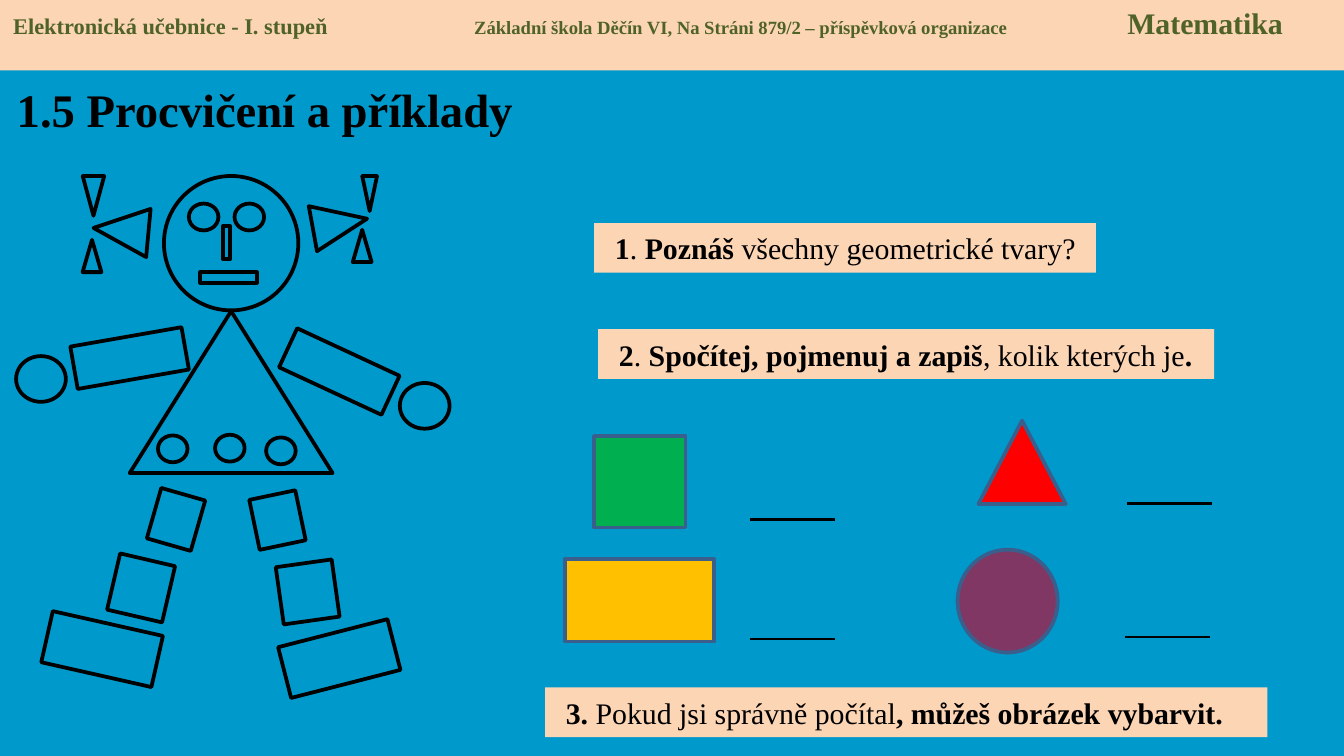
from dataclasses import dataclass

from lxml import etree
from pptx import Presentation
from pptx.dml.color import RGBColor
from pptx.enum.shapes import MSO_CONNECTOR, MSO_SHAPE
from pptx.enum.text import MSO_ANCHOR, MSO_AUTO_SIZE, PP_ALIGN
from pptx.oxml.ns import qn
from pptx.util import Pt

RECTANGLE = MSO_SHAPE.RECTANGLE
OVAL = MSO_SHAPE.OVAL
TRIANGLE = MSO_SHAPE.ISOSCELES_TRIANGLE
PX = 4572  # 200 px to the inch


@dataclass(frozen=True)
class Theme:
    font: str = "Times New Roman"
    background: str = "0099CC"
    band: str = "FCD5B5"
    header_text: str = "4F6228"
    ink: str = "000000"
    outline: str = "3A5F8C"
    green: str = "00B050"
    yellow: str = "FFC000"
    purple: str = "813763"
    red: str = "FF0000"
    title_size: int = 25
    subject_size: int = 16
    book_size: int = 12
    school_size: int = 10
    task_size: int = 16
    outline_width: float = 2
    answer_width: float = 1.5


theme = Theme()


def add_figure(kind, box, fill=None, line=None, rotation=0):
    shape = slide.shapes.add_shape(kind, *(value * PX for value in box))
    shape.shadow.inherit = False
    shape.rotation = rotation
    if fill:
        shape.fill.solid()
        shape.fill.fore_color.rgb = RGBColor.from_string(fill)
    else:
        shape.fill.background()
    if line:
        shape.line.color.rgb = RGBColor.from_string(line)
        shape.line.width = Pt(theme.outline_width)
    else:
        shape.line.fill.background()
    return shape


def add_run(paragraph, text, size, color, bold):
    run = paragraph.add_run()
    run.text = text
    run.font.name = theme.font
    run.font.size = Pt(size)
    run.font.bold = bold
    run.font.color.rgb = RGBColor.from_string(color)


presentation = Presentation()
presentation.slide_width = 2000 * PX
presentation.slide_height = 1125 * PX
slide = presentation.slides.add_slide(presentation.slide_layouts[5])
slide.background.fill.solid()
slide.background.fill.fore_color.rgb = RGBColor.from_string(theme.background)

# Header band: three parts set apart by tab stops
header = add_figure(RECTANGLE, (0, -3, 2000, 108), theme.band)
header.text_frame.vertical_anchor = MSO_ANCHOR.TOP
paragraph = header.text_frame.paragraphs[0]
paragraph.alignment = PP_ALIGN.LEFT
tab_list = etree.SubElement(paragraph._p.get_or_add_pPr(), qn("a:tabLst"))
for position in (686, 1658):
    etree.SubElement(tab_list, qn("a:tab"), pos=str(position * PX), algn="l")
for text, size in (
    ("Elektronická učebnice - I. stupeň\t", theme.book_size),
    ("Základní škola Děčín VI, Na Stráni 879/2 – příspěvková organizace\t", theme.school_size),
    ("Matematika", theme.subject_size),
):
    add_run(paragraph, text, size, theme.header_text, True)

# Title
title = slide.shapes.title
title.left, title.top, title.width, title.height = (value * PX for value in (0, 110, 788, 104))
title.text_frame.word_wrap = False
title.text_frame.auto_size = MSO_AUTO_SIZE.NONE
title.text_frame.vertical_anchor = MSO_ANCHOR.MIDDLE
paragraph = title.text_frame.paragraphs[0]
paragraph.alignment = PP_ALIGN.CENTER
add_run(paragraph, "1.5 Procvičení a příklady", theme.title_size, theme.ink, True)

# Girl made of outlined shapes: kind, box, rotation
girl = (
    # Head and face
    (OVAL, (244, 262, 200, 200), 0),
    (OVAL, (281, 303, 44, 40), 0),
    (OVAL, (349, 303, 44, 40), 0),
    (RECTANGLE, (312, 356, 50, 10), 270),
    (RECTANGLE, (298, 405, 84, 16), 0),
    # Hair bows
    (TRIANGLE, (144, 302, 72, 82), 275.3),
    (TRIANGLE, (123, 262, 32, 59), 180),
    (TRIANGLE, (123, 357, 28, 48), 0),
    (TRIANGLE, (472, 292, 68, 82), 79.6),
    (TRIANGLE, (539, 262, 22, 52), 180),
    (TRIANGLE, (525, 342, 28, 48), 0),
    # Dress and buttons
    (TRIANGLE, (193, 463, 302, 241), 0),
    (OVAL, (235, 648, 44, 40), 0),
    (OVAL, (320, 647, 44, 40), 0),
    (OVAL, (396, 651, 44, 40), 0),
    # Arms and hands
    (RECTANGLE, (109, 501, 168, 64), 350.1),
    (OVAL, (24, 530, 74, 68), 0),
    (RECTANGLE, (421, 521, 168, 64), 24.9),
    (OVAL, (595, 570, 74, 68), 0),
    # Legs and feet
    (RECTANGLE, (228, 734, 68, 78), 16),
    (RECTANGLE, (168, 832, 84, 86), 13.1),
    (RECTANGLE, (68, 927, 168, 78), 12.7),
    (RECTANGLE, (378, 736, 70, 76), 348.2),
    (RECTANGLE, (416, 838, 84, 86), 352),
    (RECTANGLE, (421, 941, 168, 78), 345.6),
)
for kind, box, rotation in girl:
    add_figure(kind, box, line=theme.ink, rotation=rotation)

# Tasks: runs are (text, bold)
tasks = (
    ((884, 332, 747, 74), (("1", True), (". ", False), ("Poznáš ", True),
                           ("všechny geometrické tvary?", False))),
    ((890, 490, 917, 74), (("2", True), (". ", False), ("Spočítej, pojmenuj a zapiš", True),
                           (", kolik kterých je", False), (".", True))),
    ((811, 1023, 1075, 74), (("3. ", True), ("Pokud jsi správně počítal", False),
                             (", můžeš obrázek vybarvit.", True))),
)
for box, runs in tasks:
    task = add_figure(RECTANGLE, box, theme.band)
    task.text_frame.word_wrap = True
    task.text_frame.margin_left = 31 * PX
    task.text_frame.margin_right = 0
    paragraph = task.text_frame.paragraphs[0]
    paragraph.alignment = PP_ALIGN.LEFT
    for text, bold in runs:
        add_run(paragraph, text, theme.task_size, theme.ink, bold)

# Shapes to count, each with an answer line: kind, box, fill, line start
answer_length = 126
for kind, box, fill, (x, y) in (
    (RECTANGLE, (884, 649, 136, 136), theme.green, (1116, 773)),
    (RECTANGLE, (841, 832, 222, 123), theme.yellow, (1116, 951)),
    (OVAL, (1425, 818, 149, 153), theme.purple, (1674, 948)),
    (TRIANGLE, (1456, 626, 130, 124), theme.red, (1677, 749)),
):
    add_figure(kind, box, fill, theme.outline)
    answer = slide.shapes.add_connector(
        MSO_CONNECTOR.STRAIGHT, x * PX, y * PX, (x + answer_length) * PX, y * PX)
    answer.line.color.rgb = RGBColor.from_string(theme.ink)
    answer.line.width = Pt(theme.answer_width)
    etree.SubElement(answer._element.spPr, qn("a:effectLst"))

presentation.save("out.pptx")
